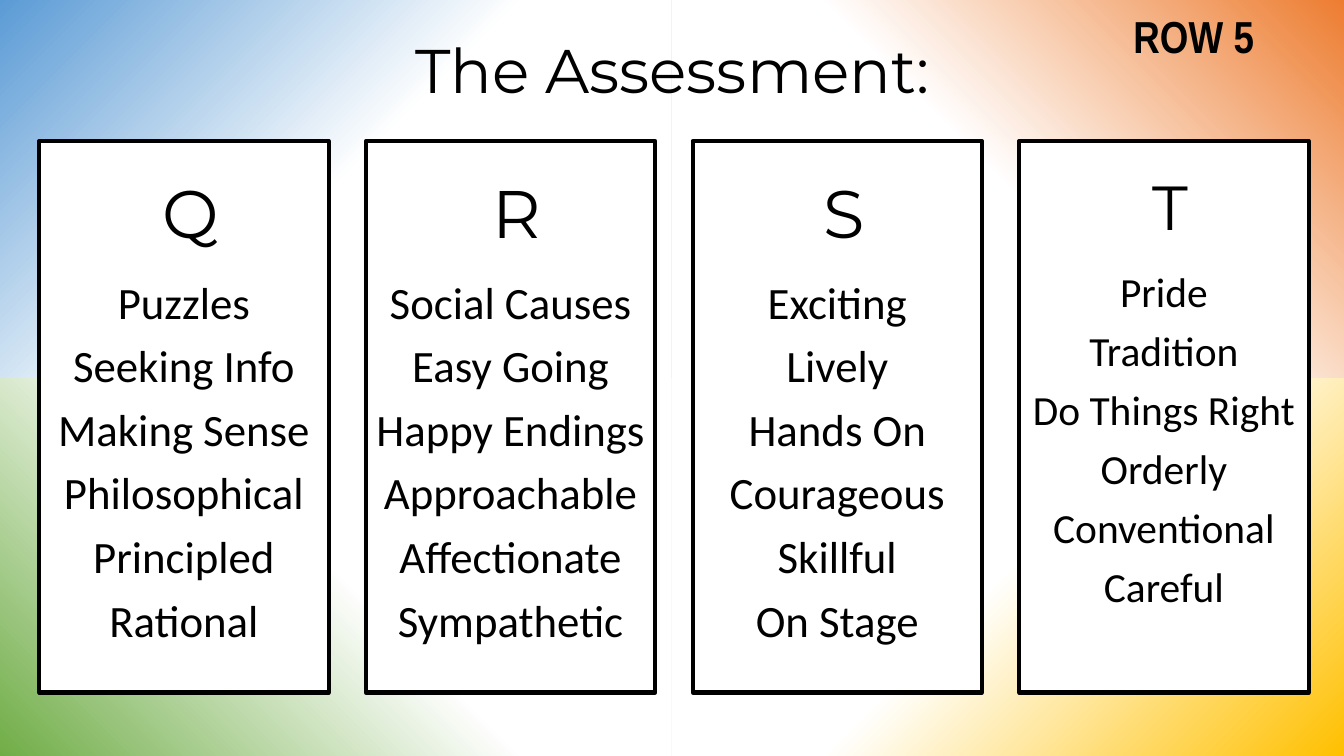
from pptx import Presentation
from pptx.dml.color import RGBColor
from pptx.enum.shapes import MSO_SHAPE
from pptx.enum.text import MSO_ANCHOR, MSO_AUTO_SIZE, PP_ALIGN
from pptx.util import Inches, Pt

WIDTH, HEIGHT = 13.33, 7.5
BLACK, WHITE = "000000", "FFFFFF"
CORNERS = [
    (0, 0, "5B9BD5", 315),
    (1, 0, "ED7D31", 225),
    (0, 1, "70AD47", 45),
    (1, 1, "FFC000", 135),
]
CARDS = [
    ("Q", ["Puzzles", "Seeking Info", "Making Sense", "Philosophical", "Principled", "Rational"], 1),
    ("R", ["Social Causes", "Easy Going", "Happy Endings", "Approachable", "Affectionate", "Sympathetic"], 1),
    ("S", ["Exciting", "Lively", "Hands On", "Courageous", "Skillful", "On Stage"], 1),
    ("T", ["Pride", "Tradition", "Do Things Right", "Orderly", "Conventional", "Careful"], 0.925),
]
CARD_LEFT, CARD_TOP, CARD_WIDTH, CARD_HEIGHT, CARD_PITCH = 0.39, 1.4, 2.87, 5.47, 3.24


def color(value):
    return RGBColor.from_string(value)


def inches(*lengths):
    return [Inches(length) for length in lengths]


def place(shape, left, top, width, height):
    shape.left, shape.top, shape.width, shape.height = inches(left, top, width, height)


def write(paragraph, text, size, typeface, spacing, bold=False):
    paragraph.alignment = PP_ALIGN.CENTER
    paragraph.line_spacing = spacing
    run = paragraph.add_run()
    run.text = text
    run.font.size = Pt(size)
    run.font.name = typeface
    run.font.bold = bold
    run.font.color.rgb = color(BLACK)


def add_backdrop(slide, left, top, width, height):
    group = slide.shapes.add_group_shape()
    for column, row, shade, angle in CORNERS:
        panel = group.shapes.add_shape(
            MSO_SHAPE.RECTANGLE,
            *inches(left + column * width / 2, top + row * height / 2, width / 2, height / 2))
        panel.shadow.inherit = False
        panel.line.fill.background()
        panel.fill.gradient()
        panel.fill.gradient_angle = angle
        for stop, position, stop_color in zip(panel.fill.gradient_stops, (0, 0.5), (shade, WHITE)):
            stop.position = position
            stop.color.rgb = color(stop_color)


def add_title(slide, left, top, width, height):
    title = slide.shapes.title
    title.element.getparent().append(title.element)
    place(title, left, top, width, height)
    frame = title.text_frame
    frame.vertical_anchor = MSO_ANCHOR.MIDDLE
    frame.auto_size = MSO_AUTO_SIZE.NONE
    write(frame.paragraphs[0], "The Assessment:", 44, "Montserrat", 0.9)


def add_card(slide, left, top, width, height, letter, traits, scale):
    card = slide.shapes.add_shape(MSO_SHAPE.RECTANGLE, *inches(left, top, width, height))
    card.shadow.inherit = False
    card.fill.solid()
    card.fill.fore_color.rgb = color(WHITE)
    card.line.color.rgb = color(BLACK)
    card.line.width = Pt(3)
    frame = card.text_frame
    frame.word_wrap = True
    frame.vertical_anchor = MSO_ANCHOR.TOP
    frame.margin_left = frame.margin_right = Inches(0.05)
    frame.margin_top = Inches(0.45 * scale)
    heading = frame.paragraphs[0]
    heading.space_after = Pt(9.6)
    heading._p.get_or_add_pPr().set("marL", str(Inches(0.13)))
    write(heading, letter, 48 * scale, "Montserrat", 0.8)
    for trait in traits:
        paragraph = frame.add_paragraph()
        paragraph.space_before = Pt(3.2)
        write(paragraph, trait, 32 * scale, "Calibri", 1.1)


def add_row_label(slide, left, top, width, height):
    label = slide.shapes.add_textbox(*inches(left, top, width, height))
    frame = label.text_frame
    frame.word_wrap = True
    frame.vertical_anchor = MSO_ANCHOR.MIDDLE
    write(frame.paragraphs[0], "ROW 5", 32, "Arial Narrow", 0.9, bold=True)


def add_assessment_slide(presentation):
    slide = presentation.slides.add_slide(presentation.slide_layouts[5])
    slide.background.fill.solid()
    slide.background.fill.fore_color.rgb = color(BLACK)
    add_backdrop(slide, 0, 0, WIDTH, HEIGHT)
    add_title(slide, 0.92, 0, 11.5, 1.45)
    for index, (letter, traits, scale) in enumerate(CARDS):
        add_card(slide, CARD_LEFT + index * CARD_PITCH, CARD_TOP, CARD_WIDTH, CARD_HEIGHT,
                 letter, traits, scale)
    add_row_label(slide, 10.35, 0, 2.98, 0.78)


def main():
    presentation = Presentation()
    presentation.slide_width, presentation.slide_height = inches(WIDTH, HEIGHT)
    add_assessment_slide(presentation)
    presentation.save("out.pptx")


if __name__ == "__main__":
    main()
